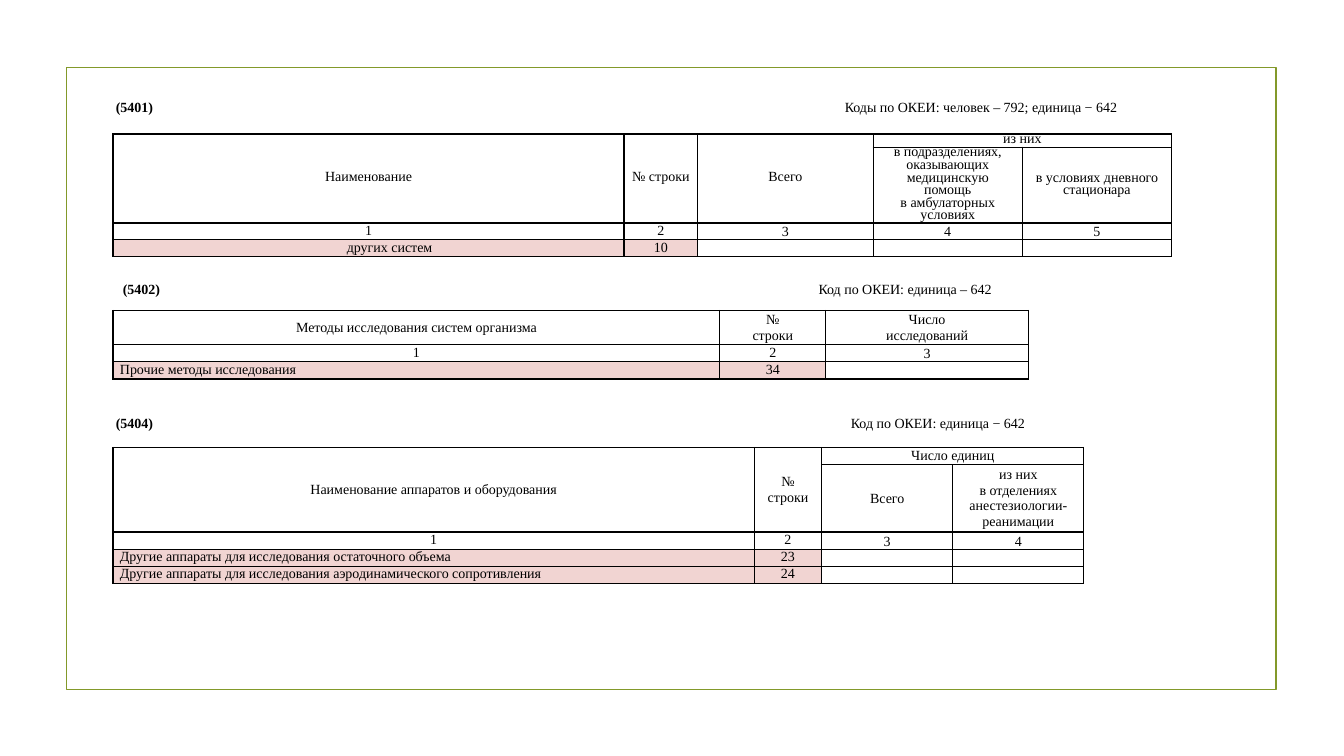
from lxml import etree
from pptx import Presentation
from pptx.dml.color import RGBColor
from pptx.enum.shapes import MSO_SHAPE
from pptx.enum.text import MSO_ANCHOR, PP_ALIGN
from pptx.oxml.ns import qn
from pptx.util import Inches, Pt

RECT = MSO_SHAPE.RECTANGLE
TOP, MIDDLE, BOTTOM = MSO_ANCHOR.TOP, MSO_ANCHOR.MIDDLE, MSO_ANCHOR.BOTTOM
LEFT, CENTER = PP_ALIGN.LEFT, PP_ALIGN.CENTER
BLACK, PINK, OLIVE = "000000", "F1D4D2", "83992A"
FONT = {"name": "Times New Roman", "size": Pt(10)}


def rgb(value):
    return RGBColor.from_string(value)


def style_runs(p):
    for r in p.runs:
        for key, value in FONT.items():
            setattr(r.font, key, value)
        r.font.color.rgb = rgb(BLACK)


prs = Presentation()
prs.slide_width, prs.slide_height = Inches(13.33), Inches(7.5)
s = prs.slides.add_slide(prs.slide_layouts[6])

# Frame
sp = s.shapes.add_shape(RECT, Inches(0.66), Inches(0.67), Inches(12), Inches(6.17))
sp.shadow.inherit = False
sp.fill.background()
sp.line.color.rgb = rgb(OLIVE)
sp.line.width = Pt(1.25)

# Table captions: left, top, width, tab position, number, unit codes
captions = [
    (1.05, 0.93, 10.99, 7.23, "(5401)", "Коды по ОКЕИ: человек – 792; единица − 642"),
    (1.12, 2.73, 9.07, 6.9, "(5402)", "Код по ОКЕИ: единица – 642"),
    (1.05, 4.06, 9.99, 7.29, "(5404)", "Код по ОКЕИ: единица − 642"),
]
for left, top, width, tab, number, codes in captions:
    tf = s.shapes.add_textbox(Inches(left), Inches(top), Inches(width), Inches(0.27)).text_frame
    tf.word_wrap = True
    tf.vertical_anchor = MIDDLE
    p = tf.paragraphs[0]
    tabs = etree.SubElement(p._p.get_or_add_pPr(), qn("a:tabLst"))
    etree.SubElement(tabs, qn("a:tab"), pos=str(Inches(tab)), algn="l")
    for text, bold in ((number, True), ("\t" + codes, False)):
        r = p.add_run()
        r.text = text
        r.font.bold = bold
    style_runs(p)

# Tables
tables = [
    {
        "top": 1.33, "cols": [5.07, 0.73, 1.74, 1.48, 1.48],
        "rows": [0.13, 0.75, 0.16, 0.16], "head": 2, "spacing": Pt(9), "indent": 2.25,
        "merges": [(0, 0, 1, 0), (0, 1, 1, 1), (0, 2, 1, 2), (0, 3, 0, 4)],
        "text": [
            ["Наименование", "№ строки", "Всего", "из них", ""],
            ["", "", "",
             "в подразделениях, оказывающих медицинскую\nпомощь\nв амбулаторных условиях",
             "в условиях дневного стационара"],
            ["1", "2", "3", "4", "5"],
            ["других систем", "10", "", "", ""],
        ],
    },
    {
        "top": 3.08, "cols": [6.02, 1.05, 2.01],
        "rows": [0.34, 0.17, 0.17], "head": 1, "spacing": None, "indent": 0,
        "merges": [],
        "text": [
            ["Методы исследования систем организма", "№\nстроки", "Число\nисследований"],
            ["1", "2", "3"],
            ["Прочие методы исследования", "34", ""],
        ],
    },
    {
        "top": 4.44, "cols": [6.36, 0.67, 1.3, 1.3],
        "rows": [0.17, 0.66, 0.17, 0.17, 0.17], "head": 2, "spacing": None, "indent": 0,
        "merges": [(0, 0, 1, 0), (0, 1, 1, 1), (0, 2, 0, 3)],
        "text": [
            ["Наименование аппаратов и оборудования", "№\nстроки", "Число единиц", ""],
            ["", "", "Всего", "из них\nв отделениях анестезиологии-реанимации"],
            ["1", "2", "3", "4"],
            ["Другие аппараты для исследования остаточного объема", "23", "", ""],
            ["Другие аппараты для исследования аэродинамического сопротивления", "24", "", ""],
        ],
    },
]
for spec_table in tables:
    cols, rows, head = spec_table["cols"], spec_table["rows"], spec_table["head"]
    table = s.shapes.add_table(len(rows), len(cols), Inches(1.12), Inches(spec_table["top"]),
                               Inches(sum(cols)), Inches(sum(rows))).table
    table.first_row = table.horz_banding = False
    for column, width in zip(table.columns, cols):
        column.width = Inches(width)
    for row, height in zip(table.rows, rows):
        row.height = Inches(height)
    for r1, c1, r2, c2 in spec_table["merges"]:
        table.cell(r1, c1).merge(table.cell(r2, c2))

    for i, texts in enumerate(spec_table["text"]):
        for j, text in enumerate(texts):
            cell = table.cell(i, j)
            is_data = i > head
            cell.margin_left = cell.margin_right = Inches(0.07)
            cell.margin_top = cell.margin_bottom = 0
            cell.vertical_anchor = MIDDLE if i < head else TOP if j < 2 else BOTTOM

            # Text, with the same size on line breaks and empty cells
            p = cell.text_frame.paragraphs[0]
            p.text = text
            p.alignment = LEFT if is_data and j == 0 else CENTER
            if i < head and spec_table["spacing"]:
                p.line_spacing = spec_table["spacing"]
            if is_data and j == 0:
                p._p.get_or_add_pPr().set("marL", str(Inches(spec_table["indent"])))
            style_runs(p)
            for br in p._p.findall(qn("a:br")):
                etree.SubElement(br, qn("a:rPr"), sz="1000")
            p._p.get_or_add_endParaRPr().set("sz", "1000")

            # Borders, then fill
            tcPr = cell._tc.get_or_add_tcPr()
            for side in ("a:lnL", "a:lnR", "a:lnT", "a:lnB"):
                ln = etree.SubElement(tcPr, qn(side), w=str(Pt(1)))
                solid = etree.SubElement(ln, qn("a:solidFill"))
                etree.SubElement(solid, qn("a:srgbClr"), val=BLACK)
            if is_data and j < 2:
                cell.fill.solid()
                cell.fill.fore_color.rgb = rgb(PINK)
            else:
                cell.fill.background()

prs.save("out.pptx")
